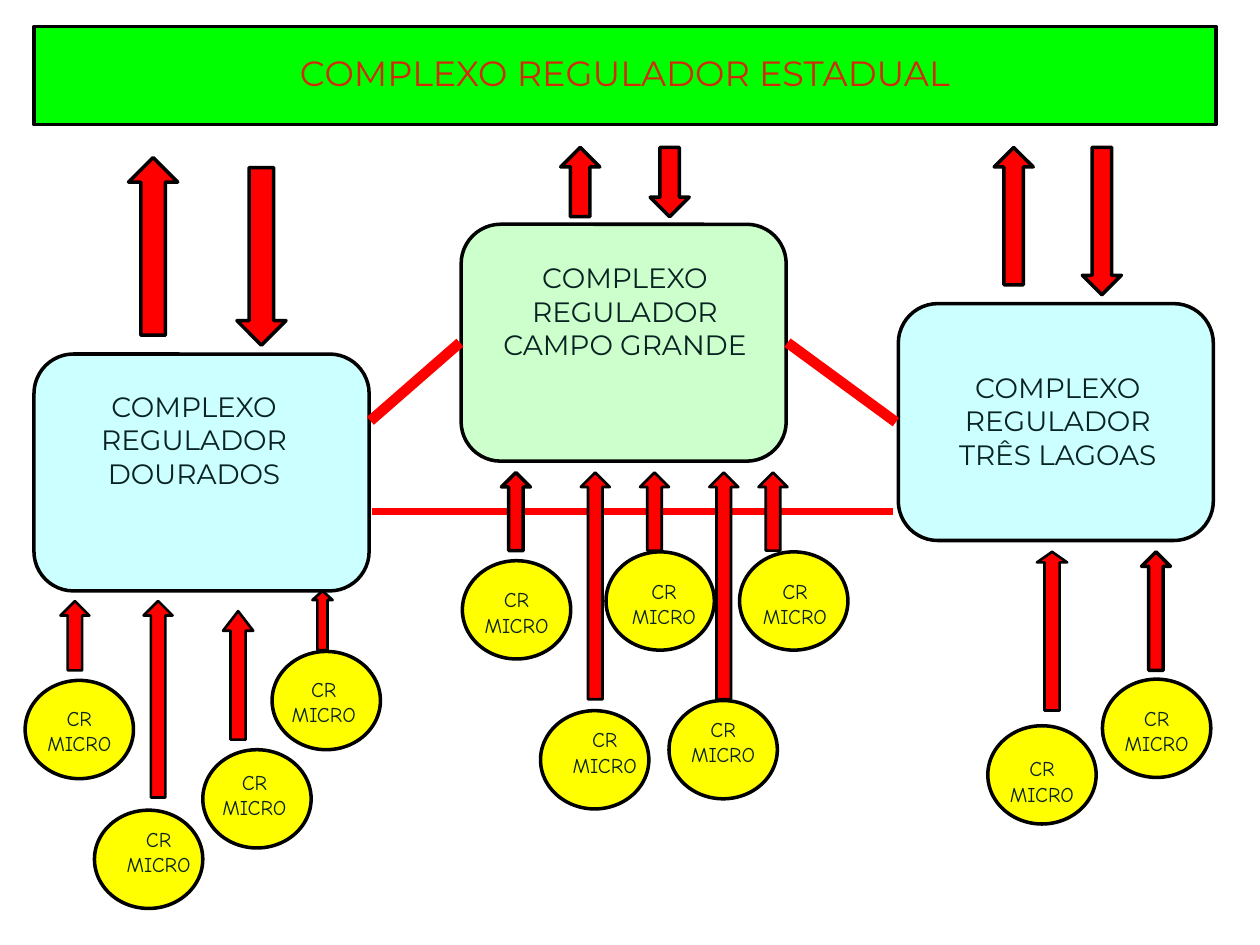
import dataclasses
import typing

import pptx
import pptx.dml.color
import pptx.enum.shapes
import pptx.enum.text
import pptx.oxml
import pptx.oxml.ns
import pptx.util

Inches = pptx.util.Inches
Pt = pptx.util.Pt
Shape = pptx.enum.shapes.MSO_SHAPE


@dataclasses.dataclass(frozen=True)
class Theme:
    state: str = "00FF00"
    region: str = "CCFFFF"
    capital: str = "CCFFCC"
    micro: str = "FFFF00"
    flow: str = "FF0000"
    outline: str = "000000"
    title: str = "D22A08"
    text: str = "082322"
    font: str = "Montserrat"
    micro_font: str = "Comic Neue"
    title_size: float = 20
    region_size: float = 16
    micro_size: float = 12
    border: float = 2
    thin_border: float = 1.5


class Box(typing.NamedTuple):
    left: float
    top: float
    width: float
    height: float


class Region(typing.NamedTuple):
    name: str
    box: Box
    label: Box
    fill: str


class Micro(typing.NamedTuple):
    left: float
    top: float
    label_dx: float
    label_dy: float


class Arrow(typing.NamedTuple):
    box: Box
    up: bool = True
    border: float = 2
    head: float = 0.5


class Link(typing.NamedTuple):
    x1: float
    y1: float
    x2: float
    y2: float
    width: float


THEME = Theme()
THIN = THEME.thin_border
MICRO_WIDTH, MICRO_HEIGHT, MICRO_LABEL_HEIGHT = 0.86, 0.78, 0.5

STATE_BOX = Box(0.27, 0.21, 9.38, 0.78)
STATE_LABEL = Box(0.43, 0.36, 9.06, 0.43)

REGIONS = [
    Region("DOURADOS", Box(0.27, 2.81, 2.66, 1.88),
           Box(0.43, 3.04, 2.22, 0.9), THEME.region),
    Region("CAMPO GRANDE", Box(3.66, 1.78, 2.58, 1.88),
           Box(3.74, 2.02, 2.44, 0.9), THEME.capital),
    Region("TRÊS LAGOAS", Box(7.13, 2.41, 2.5, 1.88),
           Box(7.34, 2.89, 2.11, 0.9), THEME.region),
]

MICROS = [
    Micro(0.2, 5.4, 0, 0.15),
    Micro(0.75, 6.43, 0.08, 0.08),
    Micro(1.61, 5.95, -0.02, 0.11),
    Micro(2.16, 5.17, -0.02, 0.15),
    Micro(3.67, 4.45, 0, 0.16),
    Micro(4.29, 5.64, 0.08, 0.08),
    Micro(4.81, 4.38, 0.03, 0.16),
    Micro(5.31, 5.56, 0, 0.08),
    Micro(5.87, 4.38, 0.01, 0.16),
    Micro(7.84, 5.76, 0, 0.19),
    Micro(8.75, 5.39, 0, 0.16),
]

STATE_ARROWS = [
    Arrow(Box(1.02, 1.25, 0.39, 1.41)),
    Arrow(Box(1.88, 1.33, 0.39, 1.41), up=False),
    Arrow(Box(4.45, 1.17, 0.31, 0.55)),
    Arrow(Box(5.16, 1.17, 0.31, 0.55), up=False),
    Arrow(Box(7.89, 1.17, 0.31, 1.09)),
    Arrow(Box(8.59, 1.17, 0.31, 1.17), up=False),
]

MICRO_ARROWS = [
    Arrow(Box(0.48, 4.77, 0.23, 0.55), border=THIN),
    Arrow(Box(1.14, 4.77, 0.23, 1.56), border=THIN),
    Arrow(Box(1.77, 4.85, 0.24, 1.02), border=THIN, head=0.65),
    Arrow(Box(2.48, 4.69, 0.16, 0.47), border=THIN, head=0.45),
    Arrow(Box(3.98, 3.75, 0.23, 0.62)),
    Arrow(Box(4.61, 3.75, 0.23, 1.8), border=THIN),
    Arrow(Box(5.08, 3.75, 0.23, 0.62), border=THIN),
    Arrow(Box(5.63, 3.75, 0.23, 1.8), border=THIN),
    Arrow(Box(6.02, 3.75, 0.23, 0.62), border=THIN),
    Arrow(Box(8.23, 4.38, 0.24, 1.26), border=THIN, head=0.35),
    Arrow(Box(9.06, 4.38, 0.23, 0.94)),
]

LINKS = [
    Link(2.94, 3.34, 3.65, 2.72, 6),
    Link(6.25, 2.72, 7.11, 3.35, 6),
    Link(2.95, 4.06, 7.09, 4.06, 4.5),
]


def rgb(color: str) -> pptx.dml.color.RGBColor:
    return pptx.dml.color.RGBColor.from_string(color)


def add_shape(slide, kind, box: Box, fill: str, border: float = THEME.border):
    sp = slide.shapes.add_shape(kind, *map(Inches, box))
    sp.shadow.inherit = False
    sp.fill.solid()
    sp.fill.fore_color.rgb = rgb(fill)
    sp.line.color.rgb = rgb(THEME.outline)
    sp.line.width = Pt(border)
    return sp


def add_label(slide, box: Box, text: str, size: float,
              color: str = THEME.text, font: str = THEME.font) -> None:
    tf = slide.shapes.add_textbox(*map(Inches, box)).text_frame
    tf.word_wrap = True
    tf.auto_size = pptx.enum.text.MSO_AUTO_SIZE.SHAPE_TO_FIT_TEXT
    p = tf.paragraphs[0]
    p.text = text
    p.alignment = pptx.enum.text.PP_ALIGN.CENTER
    p.font.name = font
    p.font.size = Pt(size)
    p.font.color.rgb = rgb(color)


def add_arrow(slide, arrow: Arrow) -> None:
    kind = Shape.UP_ARROW if arrow.up else Shape.DOWN_ARROW
    sp = add_shape(slide, kind, arrow.box, THEME.flow, arrow.border)
    sp.adjustments[1] = arrow.head


def add_link(slide, link: Link) -> None:
    line = slide.shapes.add_connector(
        pptx.enum.shapes.MSO_CONNECTOR.STRAIGHT, *map(Inches, link[:4]))
    line.line.color.rgb = rgb(THEME.flow)
    line.line.width = Pt(link.width)
    effects = pptx.oxml.parse_xml(
        f"<a:effectLst {pptx.oxml.ns.nsdecls('a')}/>")
    line._element.spPr.append(effects)


def add_micro_label(slide, micro: Micro) -> None:
    box = Box(micro.left + micro.label_dx, micro.top + micro.label_dy,
              MICRO_WIDTH, MICRO_LABEL_HEIGHT)
    add_label(slide, box, "CR MICRO", THEME.micro_size, font=THEME.micro_font)


def main() -> None:
    prs = pptx.Presentation()
    prs.slide_width, prs.slide_height = Inches(10), Inches(7.5)
    slide = prs.slides.add_slide(prs.slide_layouts[6])

    add_shape(slide, Shape.RECTANGLE, STATE_BOX, THEME.state)
    add_label(slide, STATE_LABEL, "COMPLEXO REGULADOR ESTADUAL",
              THEME.title_size, THEME.title)
    for region in REGIONS:
        add_shape(slide, Shape.ROUNDED_RECTANGLE, region.box, region.fill)
        add_label(slide, region.label, f"COMPLEXO REGULADOR {region.name}",
                  THEME.region_size)
    for micro in MICROS:
        add_shape(slide, Shape.OVAL,
                  Box(micro.left, micro.top, MICRO_WIDTH, MICRO_HEIGHT),
                  THEME.micro)
    for link in LINKS:
        add_link(slide, link)
    for arrow in STATE_ARROWS + MICRO_ARROWS:
        add_arrow(slide, arrow)
    for micro in MICROS:
        add_micro_label(slide, micro)

    prs.save("out.pptx")


if __name__ == "__main__":
    main()
